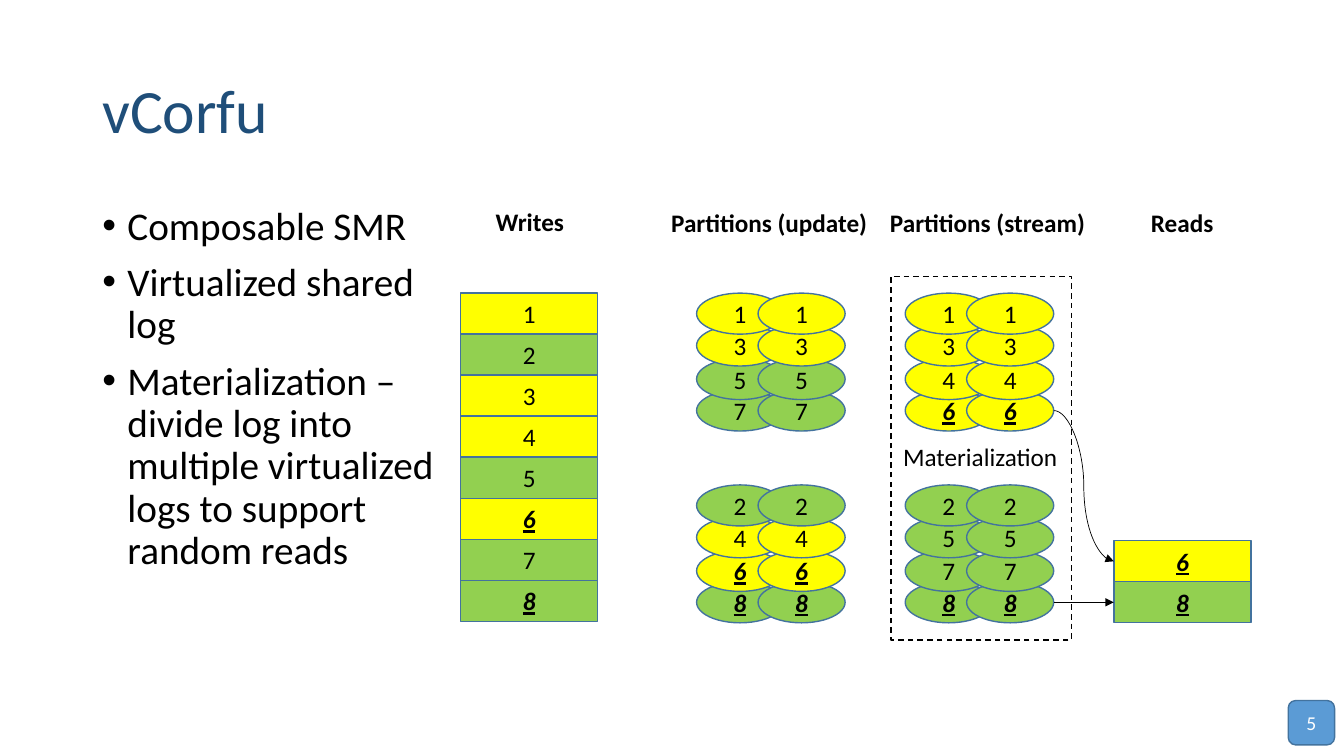
from dataclasses import dataclass

from lxml import etree
from pptx import Presentation
from pptx.dml.color import RGBColor
from pptx.enum.dml import MSO_LINE
from pptx.enum.shapes import MSO_CONNECTOR, MSO_SHAPE
from pptx.enum.text import MSO_ANCHOR, MSO_AUTO_SIZE, PP_ALIGN
from pptx.oxml.ns import qn
from pptx.shapes.autoshape import Shape
from pptx.slide import Slide
from pptx.text.text import _Paragraph
from pptx.util import Pt

RECTANGLE = MSO_SHAPE.RECTANGLE
ROUNDED = MSO_SHAPE.ROUNDED_RECTANGLE
OVAL = MSO_SHAPE.OVAL
CURVE = MSO_CONNECTOR.CURVE
DASH = MSO_LINE.DASH
MIDDLE = MSO_ANCHOR.MIDDLE
CENTER = PP_ALIGN.CENTER
GROW = MSO_AUTO_SIZE.SHAPE_TO_FIT_TEXT

BLACK = RGBColor(0x00, 0x00, 0x00)
WHITE = RGBColor(0xFF, 0xFF, 0xFF)
NAVY = RGBColor(0x1F, 0x4E, 0x79)
BLUE = RGBColor(0x5B, 0x9B, 0xD5)
OUTLINE = RGBColor(0x43, 0x73, 0x9E)
YELLOW = RGBColor(0xFF, 0xFF, 0x00)
GREEN = RGBColor(0x92, 0xD0, 0x50)

FONT = "Calibri"
YELLOW_STREAM = {1, 3, 4, 6}
READ_ENTRIES = {6, 8}

ENTRY_HEIGHT = 29.3
LOG_WIDTH = 98
OVAL_WIDTH = 62.2
REPLICA_SHIFT = 43.9
OVAL_DROPS = (0, 22.75, 46.75, 69.2)
LOG_TOP = 209.4
LOWER_TOP = 346.4


@dataclass(frozen=True)
class Frame:
    left: float
    top: float
    width: float
    height: float


@dataclass(frozen=True)
class Label:
    text: str
    left: float
    top: float
    width: float
    bold: bool = True


@dataclass(frozen=True)
class Log:
    left: float
    top: float
    entries: tuple[int, ...]


@dataclass(frozen=True)
class Partition:
    left: float
    top: float
    entries: tuple[int, ...]


LABELS = (
    Label("Writes", 347, 144.1, 64),
    Label("Partitions (update)", 472.3, 144.4, 156),
    Label("Partitions (stream)", 628.6, 144.4, 156),
    Label("Reads", 815, 144.4, 60),
    Label("Materialization", 638, 312, 126, bold=False),
)
WRITES = Log(329, LOG_TOP, tuple(range(1, 9)))
READS = Log(795.6, 386.3, (6, 8))
UPDATE_PARTITIONS = (
    Partition(497.6, LOG_TOP, (1, 3, 5, 7)),
    Partition(497.6, LOWER_TOP, (2, 4, 6, 8)),
)
STREAM_PARTITIONS = (
    Partition(646.6, LOG_TOP, (1, 3, 4, 6)),
    Partition(646.6, LOWER_TOP, (2, 5, 7, 8)),
)
BULLETS = (
    "Composable SMR",
    "Virtualized shared log",
    "Materialization – divide log into multiple virtualized logs to support random reads",
)


def add_span(para: _Paragraph, text: str, size: float, color: RGBColor,
             bold: bool = False, stressed: bool = False) -> None:
    """Add a run; a stressed run is bold, italic and underlined."""
    span = para.add_run()
    span.text = text
    font = span.font
    font.name, font.size, font.color.rgb = FONT, Pt(size), color
    if bold or stressed:
        font.bold = True
    if stressed:
        font.italic = font.underline = True


def add_text_box(page: Slide, frame: Frame) -> Shape:
    return page.shapes.add_textbox(
        Pt(frame.left), Pt(frame.top), Pt(frame.width), Pt(frame.height))


def add_box(page: Slide, kind: MSO_SHAPE, frame: Frame,
            fill: RGBColor | None, line: RGBColor) -> Shape:
    box = page.shapes.add_shape(
        kind, Pt(frame.left), Pt(frame.top), Pt(frame.width), Pt(frame.height))
    box.shadow.inherit = False
    if fill is None:
        box.fill.background()
    else:
        box.fill.solid()
        box.fill.fore_color.rgb = fill
    box.line.color.rgb = line
    box.line.width = Pt(1)
    return box


def center_text(box: Shape, text: str, size: float, color: RGBColor,
                stressed: bool = False) -> None:
    box.text_frame.vertical_anchor = MIDDLE
    para = box.text_frame.paragraphs[0]
    para.alignment = CENTER
    add_span(para, text, size, color, stressed=stressed)


def add_entry(page: Slide, kind: MSO_SHAPE, frame: Frame, entry: int) -> Shape:
    fill = YELLOW if entry in YELLOW_STREAM else GREEN
    box = add_box(page, kind, frame, fill, OUTLINE)
    center_text(box, str(entry), 18, BLACK, stressed=entry in READ_ENTRIES)
    return box


def add_log(page: Slide, log: Log) -> list[Shape]:
    return [
        add_entry(page, RECTANGLE,
                  Frame(log.left, log.top + row * ENTRY_HEIGHT, LOG_WIDTH, ENTRY_HEIGHT), entry)
        for row, entry in enumerate(log.entries)
    ]


def add_partition(page: Slide, partition: Partition) -> Shape:
    """Stack both replicas from the bottom up; return the last replica's bottom entry."""
    for replica in range(2):
        left = partition.left + replica * REPLICA_SHIFT
        ovals = [
            add_entry(page, OVAL,
                      Frame(left, partition.top + drop, OVAL_WIDTH, ENTRY_HEIGHT), entry)
            for drop, entry in reversed(list(zip(OVAL_DROPS, partition.entries)))
        ]
    return ovals[0]


def add_arrow(page: Slide, source: Shape, target: Shape) -> None:
    arrow = page.shapes.add_connector(
        CURVE, source.left + source.width, source.top + source.height // 2,
        target.left, target.top + target.height // 2)
    arrow.line.color.rgb = BLACK
    arrow.line.width = Pt(0.5)
    properties = arrow.line._get_or_add_ln()
    etree.SubElement(properties, qn("a:tailEnd"), type="triangle")
    etree.SubElement(arrow._element.spPr, qn("a:effectLst"))


def add_title(page: Slide) -> None:
    text = add_text_box(page, Frame(66, 28.75, 828, 104.4)).text_frame
    text.word_wrap = True
    text.vertical_anchor = MIDDLE
    text.paragraphs[0].line_spacing = 0.9
    add_span(text.paragraphs[0], "vCorfu", 44, NAVY)


def add_bullets(page: Slide) -> None:
    text = add_text_box(page, Frame(66, 143.75, 251.5, 342.6)).text_frame
    text.word_wrap = True
    for index, bullet in enumerate(BULLETS):
        para = text.add_paragraph() if index else text.paragraphs[0]
        para.line_spacing = 0.9
        para.space_before = Pt(10)
        layout = para._p.get_or_add_pPr()
        layout.set("marL", str(Pt(18)))
        layout.set("indent", str(-Pt(18)))
        etree.SubElement(layout, qn("a:buFont"), typeface="Arial")
        etree.SubElement(layout, qn("a:buChar"), char="•")
        add_span(para, bullet, 28, BLACK)


def add_label(page: Slide, label: Label) -> None:
    box = add_text_box(page, Frame(label.left, label.top, label.width, 29.1))
    box.text_frame.word_wrap = False
    box.text_frame.auto_size = GROW
    add_span(box.text_frame.paragraphs[0], label.text, 18, BLACK, bold=label.bold)


def main() -> None:
    deck = Presentation()
    deck.slide_width, deck.slide_height = Pt(960), Pt(540)
    page = deck.slides.add_slide(deck.slide_layouts[6])
    add_title(page)
    add_bullets(page)
    add_log(page, WRITES)
    for partition in UPDATE_PARTITIONS:
        add_partition(page, partition)
    sources = [add_partition(page, partition) for partition in STREAM_PARTITIONS]
    for source, target in zip(sources, add_log(page, READS)):
        add_arrow(page, source, target)
    for label in LABELS:
        add_label(page, label)
    stream_border = add_box(page, RECTANGLE, Frame(636.5, 197.3, 128.9, 259.9), None, BLACK)
    stream_border.line.dash_style = DASH
    page_number = add_box(page, ROUNDED, Frame(920.2, 500.4, 33.1, 31.7), BLUE, OUTLINE)
    center_text(page_number, "5", 14, WHITE)
    deck.save("out.pptx")


if __name__ == "__main__":
    main()
